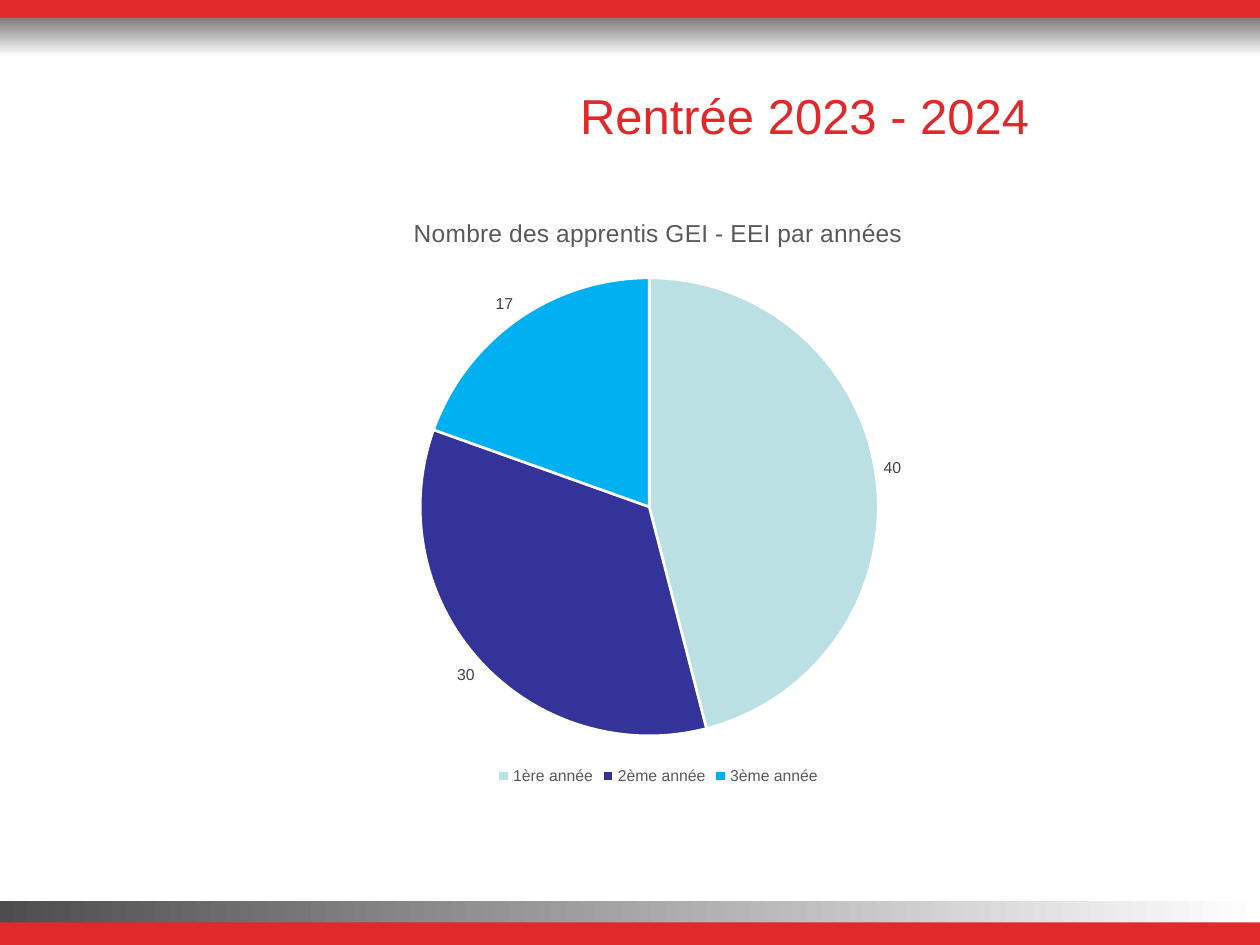
from dataclasses import dataclass

from lxml import etree
from pptx import Presentation
from pptx.chart.data import CategoryChartData
from pptx.dml.color import RGBColor
from pptx.enum.chart import XL_CHART_TYPE, XL_LABEL_POSITION, XL_LEGEND_POSITION
from pptx.enum.shapes import MSO_SHAPE
from pptx.enum.text import MSO_ANCHOR, PP_ALIGN
from pptx.oxml.ns import qn
from pptx.util import Inches, Pt

FONT = "Arial"
COLORS = {
    "red": "E1282B",
    "gray": "5F5F5F",
    "dark": "4D4D4D",
    "white": "FFFFFF",
    "text": "595959",
    "label": "404040",
    "black": "000000",
}


@dataclass
class Band:
    left: float
    top: float
    width: float
    height: float
    start: str
    end: str = ""
    angle: int = 0  # counter-clockwise


@dataclass
class Year:
    name: str
    apprentices: int
    color: str


BANDS = [
    Band(0, 0.07, 10.01, 0.38, "gray", "white", 270),
    Band(0, 0, 10.01, 0.14, "red"),
    Band(-0.01, 7.15, 10.01, 0.35, "dark", "white"),
    Band(0, 7.32, 10, 0.19, "red"),
]
YEARS = [
    Year("1ère année", 40, "BBE0E3"),
    Year("2ème année", 30, "333399"),
    Year("3ème année", 17, "00B0F0"),
]


def rgb(name: str) -> RGBColor:
    return RGBColor.from_string(COLORS[name])


def set_font(font, size: float, color: str) -> None:
    font.name = FONT
    font.size = Pt(size)
    font.bold = False
    font.color.rgb = rgb(color)


def draw_band(page, band: Band) -> None:
    shape = page.shapes.add_shape(
        MSO_SHAPE.RECTANGLE, Inches(band.left), Inches(band.top),
        Inches(band.width), Inches(band.height))
    shape.shadow.inherit = False
    shape.line.fill.background()
    if band.end:
        shape.fill.gradient()
        shape.fill.gradient_angle = band.angle
        for stop, position, color in zip(
                shape.fill.gradient_stops, (0, 1), (band.start, band.end)):
            stop.position = position
            stop.color.rgb = rgb(color)
    else:
        shape.fill.solid()
        shape.fill.fore_color.rgb = rgb(band.start)


def place_plot(chart, left: float, top: float, width: float, height: float) -> None:
    """Fix the inner plot area, in fractions of the chart."""
    area = chart.plots[0]._element.getparent()
    for old in area.findall(qn("c:layout")):
        area.remove(old)
    layout = etree.Element(qn("c:layout"))
    manual = etree.SubElement(layout, qn("c:manualLayout"))
    settings = {"layoutTarget": "inner", "xMode": "edge", "yMode": "edge",
                "x": left, "y": top, "w": width, "h": height}
    for tag, value in settings.items():
        etree.SubElement(manual, qn(f"c:{tag}")).set("val", str(value))
    area.insert(0, layout)


def draw_pie(page, years: list[Year]) -> None:
    data = CategoryChartData()
    data.categories = [year.name for year in years]
    data.add_series("Series 1", [year.apprentices for year in years])
    chart = page.shapes.add_chart(
        XL_CHART_TYPE.PIE, Inches(1.59), Inches(1.54),
        Inches(7.27), Inches(4.73), data).chart
    set_font(chart.font, 10, "black")

    # Chart title and legend
    chart.has_title = True
    para = chart.chart_title.text_frame.paragraphs[0]
    para.text = "Nombre des apprentis GEI - EEI par années"
    set_font(para.font, 14, "text")
    chart.chart_title.include_in_layout = False
    chart.has_legend = True
    chart.legend.position = XL_LEGEND_POSITION.BOTTOM
    chart.legend.include_in_layout = False
    set_font(chart.legend.font, 9, "text")

    # Slices and values
    plot = chart.plots[0]
    plot.vary_by_categories = True
    series = plot.series[0]
    for index, year in enumerate(years):
        slice_format = series.points[index].format
        slice_format.fill.solid()
        slice_format.fill.fore_color.rgb = RGBColor.from_string(year.color)
        slice_format.line.color.rgb = rgb("white")
        slice_format.line.width = Pt(1.5)
    labels = series.data_labels
    labels.show_value = True
    labels.position = XL_LABEL_POSITION.OUTSIDE_END
    set_font(labels.font, 9, "label")
    place_plot(chart, 0.24, 0.14, 0.5, 0.77)


def main() -> None:
    deck = Presentation()
    deck.slide_width, deck.slide_height = Inches(10), Inches(7.5)
    page = deck.slides.add_slide(deck.slide_layouts[5])

    # Top and bottom bands
    for band in BANDS:
        draw_band(page, band)

    # Slide title
    title = page.shapes.title
    title.left, title.top = Inches(3.04), Inches(0.63)
    title.width, title.height = Inches(6.69), Inches(0.57)
    title.text_frame.vertical_anchor = MSO_ANCHOR.MIDDLE
    para = title.text_frame.paragraphs[0]
    para.text = "Rentrée 2023 - 2024"
    para.alignment = PP_ALIGN.CENTER
    set_font(para.font, 28, "red")

    draw_pie(page, YEARS)
    deck.save("out.pptx")


if __name__ == "__main__":
    main()
